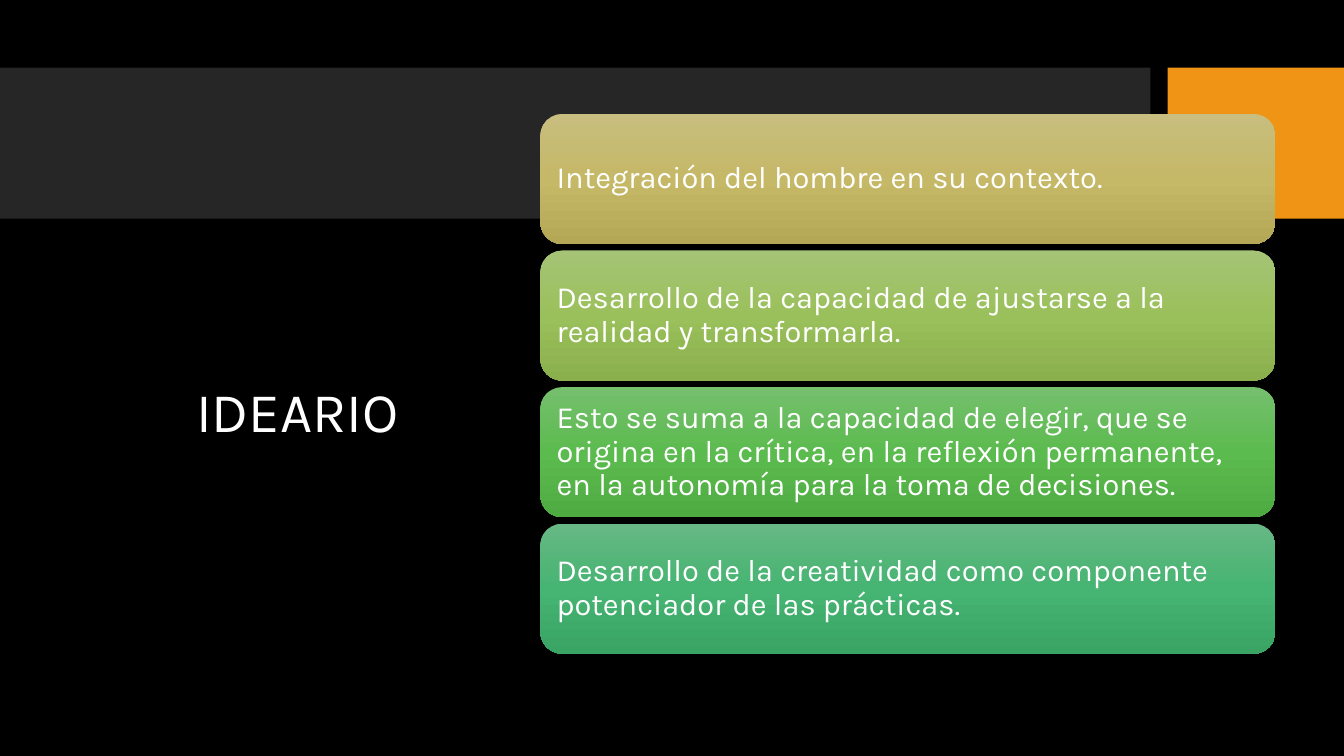
from copy import deepcopy
from pptx import Presentation
from pptx.dml.color import RGBColor
from pptx.enum.shapes import MSO_SHAPE
from pptx.enum.text import MSO_ANCHOR, MSO_AUTO_SIZE, PP_ALIGN
from pptx.oxml.ns import qn
from pptx.util import Inches, Pt

FONT = "Karla"
BLACK = RGBColor(0x00, 0x00, 0x00)
WHITE = RGBColor(0xFF, 0xFF, 0xFF)
GREY = RGBColor(0x26, 0x26, 0x26)
ORANGE = RGBColor(0xF0, 0x94, 0x15)
GOLD = [RGBColor(0xC8, 0xBE, 0x7F), RGBColor(0xC5, 0xB8, 0x67), RGBColor(0xB4, 0xA7, 0x56)]
LIME = [RGBColor(0xA5, 0xC4, 0x76), RGBColor(0x9A, 0xC0, 0x5B), RGBColor(0x8A, 0xAF, 0x4D)]
GREEN = [RGBColor(0x75, 0xBF, 0x6D), RGBColor(0x5C, 0xBB, 0x4F), RGBColor(0x4E, 0xAB, 0x42)]
TEAL = [RGBColor(0x67, 0xB8, 0x84), RGBColor(0x46, 0xB4, 0x72), RGBColor(0x3A, 0xA4, 0x64)]

IDEAS = [
    ("Integración del hombre en su contexto.", GOLD),
    ("Desarrollo de la capacidad de ajustarse a la realidad y transformarla.", LIME),
    ("Esto se suma a la capacidad de elegir, que se origina en la crítica, "
     "en la reflexión permanente, en la autonomía para la toma de decisiones.", GREEN),
    ("Desarrollo de la creatividad como componente potenciador de las prácticas.", TEAL),
]
TOP, PITCH = 1.13, 1.355


def add_box(slide, kind, left, top, width, height):
    box = slide.shapes.add_shape(
        kind, Inches(left), Inches(top), Inches(width), Inches(height))
    box.shadow.inherit = False
    box.line.fill.background()
    return box


def add_bar(slide, left, width, color):
    bar = add_box(slide, MSO_SHAPE.RECTANGLE, left, 0.67, width, 1.5)
    bar.fill.solid()
    bar.fill.fore_color.rgb = color


def shade(shape, colors):
    """Fill from top to bottom with evenly spaced colours."""
    shape.fill.gradient()
    shape.fill.gradient_angle = 270
    first = shape._element.spPr.find(".//" + qn("a:gs"))
    first.addnext(deepcopy(first))
    for i, (stop, color) in enumerate(zip(shape.fill.gradient_stops, colors)):
        stop.position = i / (len(colors) - 1)
        stop.color.rgb = color


def write(frame, text, size, align, anchor):
    frame.word_wrap = True
    frame.auto_size = MSO_AUTO_SIZE.NONE
    frame.vertical_anchor = anchor
    para = frame.paragraphs[0]
    para.alignment = align
    para.line_spacing = 0.9
    run = para.add_run()
    run.text = text
    run.font.name = FONT
    run.font.size = Pt(size)
    run.font.color.rgb = WHITE


def set_title(slide, text):
    title = slide.shapes.title
    title.left, title.top = Inches(0.64), Inches(1.84)
    title.width, title.height = Inches(3.41), Inches(2.62)
    write(title.text_frame, text, 40, PP_ALIGN.RIGHT, MSO_ANCHOR.BOTTOM)
    # Bring the title in front of the bars
    slide.shapes._spTree.append(title._element)


def add_card(slide, top, text, colors):
    card = add_box(slide, MSO_SHAPE.ROUNDED_RECTANGLE, 5.36, top, 7.29, 1.29)
    shade(card, colors)
    frame = card.text_frame
    frame.margin_left = frame.margin_right = Inches(0.1)
    frame.margin_top = frame.margin_bottom = Inches(0.09)
    write(frame, text, 22, PP_ALIGN.LEFT, MSO_ANCHOR.MIDDLE)


def main():
    deck = Presentation()
    deck.slide_width, deck.slide_height = Inches(13.33), Inches(7.5)
    slide = deck.slides.add_slide(deck.slide_layouts[5])
    slide.background.fill.solid()
    slide.background.fill.fore_color.rgb = BLACK

    # Header band
    add_bar(slide, 0, 11.41, GREY)
    add_bar(slide, 11.58, 1.75, ORANGE)

    set_title(slide, "IDEARIO")

    # Stack of ideas
    for i, (text, colors) in enumerate(IDEAS):
        add_card(slide, TOP + i * PITCH, text, colors)

    deck.save("out.pptx")


if __name__ == "__main__":
    main()
